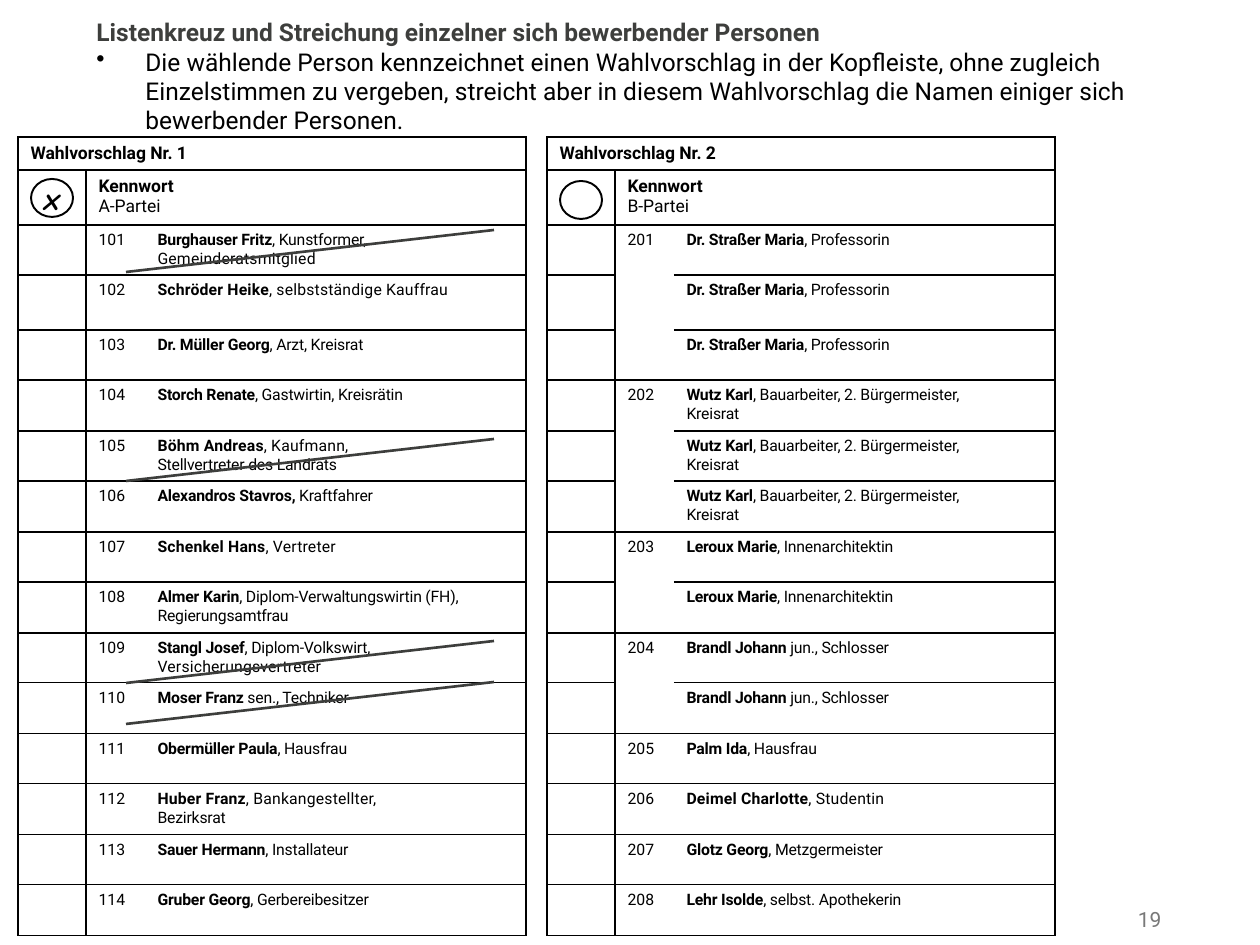
from dataclasses import dataclass

from lxml.etree import SubElement
from pptx import Presentation
from pptx.dml.color import RGBColor
from pptx.enum.shapes import MSO_CONNECTOR as Connector, MSO_SHAPE as Shape
from pptx.enum.text import MSO_ANCHOR as Anchor, PP_ALIGN as Align
from pptx.oxml.ns import qn
from pptx.util import Emu, Pt

COLORS = {"black": "000000", "dark": "3D3E3C", "grey": "797979"}
FONT = "Roboto"
PX = 914400 / 126
COLUMNS = [68, 59, 381]
ROWS = [33, 55, 50, 55, 50] + [51, 50] * 5 + [51]
TABLE_TOP = 137


@dataclass
class Candidate:
    number: str
    name: str
    details: str
    second_line: str = ""
    name_spacing: int = -10  # hundredths of a point
    second_spacing: int = -10


@dataclass
class Ballot:
    left: int
    title: str
    party: str
    circle_top: int
    mark: str
    candidates: list[Candidate]


def repeated(number: str, name: str, details: str, times: int, second_line: str = "") -> list[Candidate]:
    """A candidate listed several times, numbered only once."""
    return [Candidate("" if i else number, name, details, second_line) for i in range(times)]


BALLOTS = [
    Ballot(18, "Wahlvorschlag Nr. 1", "A-Partei", 179, "x", [
        Candidate("101", "Burghauser Fritz", ", Kunstformer,", "Gemeinderatsmitglied", second_spacing=10),
        Candidate("102", "Schröder Heike", ", selbstständige Kauffrau", name_spacing=10),
        Candidate("103", "Dr. Müller Georg", ", Arzt, Kreisrat"),
        Candidate("104", "Storch Renate", ", Gastwirtin, Kreisrätin"),
        Candidate("105", "Böhm Andreas", ", Kaufmann,", "Stellvertreter des Landrats", 10),
        Candidate("106", "Alexandros Stavros,", " Kraftfahrer"),
        Candidate("107", "Schenkel Hans", ", Vertreter", name_spacing=10),
        Candidate("108", "Almer Karin", ", Diplom-Verwaltungswirtin (FH), Regierungsamtfrau"),
        Candidate("109", "Stangl Josef", ", Diplom-Volkswirt,", "Versicherungsvertreter", second_spacing=10),
        Candidate("110", "Moser Franz", " sen., Techniker"),
        Candidate("111", "Obermüller Paula", ", Hausfrau"),
        Candidate("112", "Huber Franz", ", Bankangestellter,", "Bezirksrat", 10),
        Candidate("113", "Sauer Hermann", ", Installateur"),
        Candidate("114", "Gruber Georg", ", Gerbereibesitzer"),
    ]),
    Ballot(547, "Wahlvorschlag Nr. 2", "B-Partei", 181, "", [
        *repeated("201", "Dr. Straßer Maria", ", Professorin", 3),
        *repeated("202", "Wutz Karl", ", Bauarbeiter, 2. Bürgermeister,", 3, "Kreisrat"),
        *repeated("203", "Leroux Marie", ", Innenarchitektin", 2),
        *repeated("204", "Brandl Johann", " jun., Schlosser", 2),
        Candidate("205", "Palm Ida", ", Hausfrau"),
        Candidate("206", "Deimel Charlotte", ", Studentin", name_spacing=10),
        Candidate("207", "Glotz Georg", ", Metzgermeister"),
        Candidate("208", "Lehr Isolde", ", selbst. Apothekerin"),
    ]),
]


def px(length: int) -> Emu:
    return Emu(round(length * PX))


def color(name: str) -> RGBColor:
    return RGBColor.from_string(COLORS[name])


def add_span(para, text: str, size: int, bold: bool = False, ink: str = "black",
             spacing: int = 0, font: str = FONT):
    span = para.add_run()
    span.text = text
    span.font.size, span.font.bold, span.font.name = Pt(size), bold, font
    span.font.color.rgb = color(ink)
    if spacing:
        span._r.get_or_add_rPr().set("spc", str(spacing))
    return span


def add_box(page, left: int, top: int, width: int, height: int):
    frame = page.shapes.add_textbox(px(left), px(top), px(width), px(height)).text_frame
    frame.word_wrap = True
    return frame


def style_cell(cell, edges: str = "LRTB") -> None:
    """Draw the named edges, clear the others and leave the cell unfilled."""
    properties = cell._tc.get_or_add_tcPr()
    for edge in "LRTB":
        line = SubElement(properties, qn(f"a:ln{edge}"), w=str(Pt(1)))
        if edge in edges:
            fill = SubElement(line, qn("a:solidFill"))
            SubElement(fill, qn("a:srgbClr"), val=COLORS["black"])
        else:
            SubElement(line, qn("a:noFill"))
    cell.fill.background()
    # Empty cells must not stretch their row
    para = cell.text_frame.paragraphs[0]
    if not para.runs:
        SubElement(para._p, qn("a:endParaRPr"), sz="900")


def draw_table(page, ballot: Ballot) -> None:
    table = page.shapes.add_table(len(ROWS), len(COLUMNS), px(ballot.left), px(TABLE_TOP),
                                  px(sum(COLUMNS)), px(sum(ROWS))).table
    table.first_row = table.horz_banding = False
    for column, width in zip(table.columns, COLUMNS):
        column.width = px(width)
    for row, height in zip(table.rows, ROWS):
        row.height = px(height)

    # Heading and party
    table.cell(0, 0).merge(table.cell(0, 2))
    table.cell(1, 1).merge(table.cell(1, 2))
    add_span(table.cell(0, 0).text_frame.paragraphs[0], ballot.title, 10, True)
    party = table.cell(1, 1).text_frame
    add_span(party.paragraphs[0], "Kennwort", 10, True)
    add_span(party.add_paragraph(), ballot.party, 10)
    for row in range(2):
        for column in range(3):
            style_cell(table.cell(row, column))

    # Candidates
    following = [person.number for person in ballot.candidates[1:]] + ["end"]
    for row, (person, next_number) in enumerate(zip(ballot.candidates, following), 2):
        vote, number, entry = (table.cell(row, column) for column in range(3))
        if person.number:
            add_span(number.text_frame.paragraphs[0], person.number, 9)
        para = entry.text_frame.paragraphs[0]
        add_span(para, person.name, 9, True, spacing=person.name_spacing)
        add_span(para, person.details, 9, spacing=person.name_spacing)
        if person.second_line:
            add_span(entry.text_frame.add_paragraph(), person.second_line, 9,
                     spacing=person.second_spacing)
        style_cell(vote)
        style_cell(number, "L" + "T" * bool(person.number) + "B" * bool(next_number))
        style_cell(entry, "RTB")


def draw_circle(page, ballot: Ballot) -> None:
    circle = page.shapes.add_shape(Shape.OVAL, px(ballot.left + 13), px(ballot.circle_top), px(42), px(38))
    circle.shadow.inherit = False
    circle.fill.background()
    circle.line.color.rgb = color("black")
    circle.line.width = Pt(1.1)
    if ballot.mark:
        frame = circle.text_frame
        frame.margin_left = frame.margin_right = frame.margin_top = frame.margin_bottom = 0
        frame.word_wrap, frame.vertical_anchor = False, Anchor.MIDDLE
        frame.paragraphs[0].alignment = Align.CENTER
        add_span(frame.paragraphs[0], ballot.mark, 18, True, font="Comic Neue").font.italic = True


def draw_strike(page, bottom: int) -> None:
    strike = page.shapes.add_connector(Connector.STRAIGHT, px(126), px(bottom), px(494), px(bottom - 42))
    strike.line.color.rgb = color("dark")
    strike.line.width = Pt(1.5)
    SubElement(strike._element.spPr, qn("a:effectLst"))


def main() -> None:
    deck = Presentation()
    deck.slide_width, deck.slide_height = px(1260), px(945)
    page = deck.slides.add_slide(deck.slide_layouts[6])

    # Ballot papers
    for ballot in BALLOTS:
        draw_table(page, ballot)
        draw_circle(page, ballot)

    # Title and explanation
    intro = add_box(page, 84, 11, 1087, 141)
    add_span(intro.paragraphs[0], "Listenkreuz und Streichung einzelner sich bewerbender Personen", 14, True, "dark")
    para = intro.add_paragraph()
    properties = para._p.get_or_add_pPr()
    properties.set("marL", str(px(49)))
    properties.set("indent", str(px(-49)))
    SubElement(properties, qn("a:buChar"), char="•")
    add_span(para, "Die wählende Person kennzeichnet einen Wahlvorschlag in der Kopfleiste, ohne zugleich "
             "Einzelstimmen zu vergeben, streicht aber in diesem Wahlvorschlag die Namen einiger sich "
             "bewerbender Personen.", 14)

    # Struck-out candidates
    for bottom in (272, 683, 481, 724):
        draw_strike(page, bottom)

    # Slide number
    footer = add_box(page, 1061, 903, 113, 32)
    footer.vertical_anchor = Anchor.MIDDLE
    footer.paragraphs[0].alignment = Align.RIGHT
    add_span(footer.paragraphs[0], "19", 12, ink="grey")

    deck.save("out.pptx")


if __name__ == "__main__":
    main()
